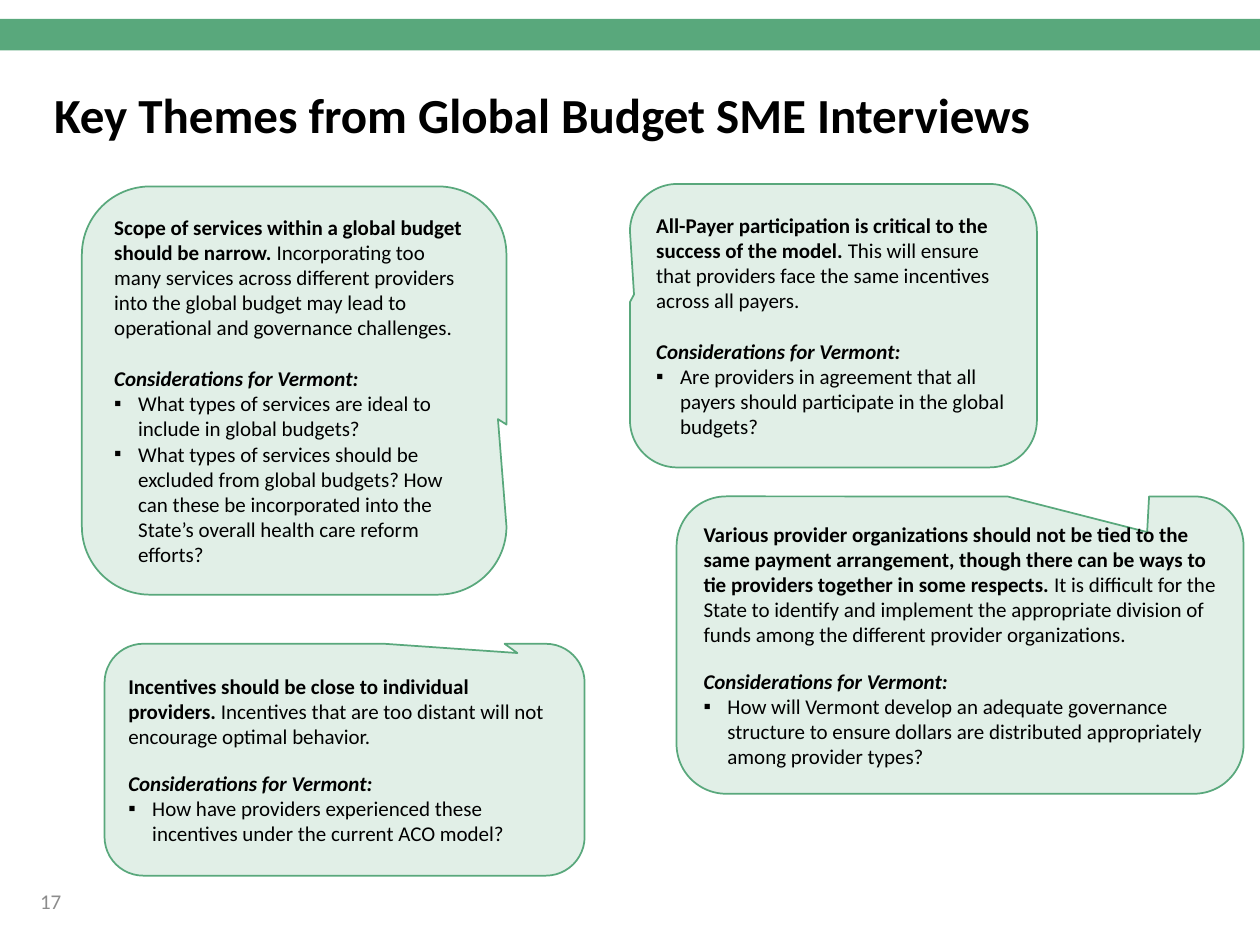
from lxml import etree
from pptx import Presentation
from pptx import util as u
from pptx.dml.color import RGBColor
from pptx.enum import shapes, text
from pptx.oxml import ns

HUES = {"bar": "59A87C", "fill": "E1EFE7", "ink": "000000", "page": "8C8C8C"}
FONT = "Calibri"
COLS, ROWS = 100, 75
HEAD = "Considerations for Vermont:"

# Box on the grid, callout tip, gap after the lead (pt), theme, detail, questions
THEMES = [
    ((50, 14.6, 32.3, 22.5), (-0.49, -0.11), 14.5,
     "All-Payer participation is critical to the success of the model. ",
     "This will ensure that providers face the same incentives across all payers.",
     ["Are providers in agreement that all payers should participate in the "
      "global budgets?"]),
    ((8.3, 51.1, 38.1, 18.4), (0.36, -0.46), 12,
     "Incentives should be close to individual providers. ",
     "Incentives that are too distant will not encourage optimal behavior.",
     ["How have providers experienced these incentives under the current ACO "
      "model?"]),
    ((6.5, 14.8, 33.7, 32.4), (0.48, 0.07), 14.5,
     "Scope of services within a global budget should be narrow. ",
     "Incorporating too many services across different providers into the "
     "global budget may lead to operational and governance challenges.",
     ["What types of services are ideal to include in global budgets?",
      "What types of services should be excluded from global budgets? How can "
      "these be incorporated into the State’s overall health care reform "
      "efforts?"]),
    ((53.7, 39.4, 45, 23.6), (0.33, -0.38), 12,
     "Various provider organizations should not be tied to the same payment "
     "arrangement, though there can be ways to tie providers together in some "
     "respects. ",
     "It is difficult for the State to identify and implement the appropriate "
     "division of funds among the different provider organizations.",
     ["How will Vermont develop an adequate governance structure to ensure "
      "dollars are distributed appropriately among provider types?"]),
]


class Deck:
    """Holds the style and the current slide."""

    def __init__(self):
        self.prs = Presentation()
        self.prs.slide_width, self.prs.slide_height = u.Inches(10), u.Inches(7.5)
        self.slide = self.prs.slides.add_slide(self.prs.slide_layouts[5])

    def grid(self, x, y, w, h):
        col, row = self.prs.slide_width / COLS, self.prs.slide_height / ROWS
        return [u.Emu(round(n)) for n in (x * col, y * row, w * col, h * row)]

    def hue(self, name):
        return RGBColor.from_string(HUES[name])

    def run(self, par, words, size=12, hue="ink", bold=False, slant=False):
        run = par.add_run()
        run.text = words
        font = run.font
        font.name, font.size = FONT, u.Pt(size)
        font.bold, font.italic = bold, slant
        font.color.rgb = self.hue(hue)

    def frame(self, shape):
        frame = shape.text_frame
        frame.word_wrap = True
        frame.auto_size = text.MSO_AUTO_SIZE.NONE
        frame.vertical_anchor = text.MSO_ANCHOR.MIDDLE
        frame.paragraphs[0].alignment = text.PP_ALIGN.LEFT
        return frame

    def shape(self, kind, box, fill, line=None):
        shape = self.slide.shapes.add_shape(kind, *self.grid(*box))
        shape.shadow.inherit = False
        shape.fill.solid()
        shape.fill.fore_color.rgb = self.hue(fill)
        if line:
            shape.line.color.rgb = self.hue(line)
            shape.line.width = u.Pt(1)
        else:
            shape.line.fill.background()
        return shape

    def title(self, box, words):
        shape = self.slide.shapes.title
        shape.left, shape.top, shape.width, shape.height = self.grid(*box)
        par = self.frame(shape).paragraphs[0]
        par.line_spacing = 0.9
        self.run(par, words, 28, bold=True)

    def label(self, box, words):
        shape = self.slide.shapes.add_textbox(*self.grid(*box))
        self.run(self.frame(shape).paragraphs[0], words, hue="page")

    def bullet(self, par):
        props = par._p.get_or_add_pPr()
        props.set("marL", str(u.Inches(0.19)))
        props.set("indent", str(-u.Inches(0.19)))
        tint = etree.SubElement(props, ns.qn("a:buClr"))
        etree.SubElement(tint, ns.qn("a:srgbClr"), val=HUES["ink"])
        etree.SubElement(props, ns.qn("a:buFont"), typeface="Arial")
        etree.SubElement(props, ns.qn("a:buChar"), char="▪")

    def callout(self, box, tip, gap, theme, detail, asks):
        kind = shapes.MSO_SHAPE.ROUNDED_RECTANGULAR_CALLOUT
        shape = self.shape(kind, box, "fill", "bar")
        for i, value in enumerate((*tip, 0.167)):
            shape.adjustments[i] = value
        frame = self.frame(shape)
        # Theme and its detail
        lead = frame.paragraphs[0]
        lead.space_after = u.Pt(gap)
        self.run(lead, theme, bold=True)
        self.run(lead, detail)
        # Questions for the state
        for i, words in enumerate([HEAD, *asks]):
            par = frame.add_paragraph()
            par.alignment = text.PP_ALIGN.LEFT
            if i:
                self.bullet(par)
            self.run(par, words, bold=not i, slant=not i)


def main():
    deck = Deck()
    # Header band, title and page number
    deck.shape(shapes.MSO_SHAPE.RECTANGLE, (0, 1.5, COLS, 2.5), "bar")
    deck.title((3.3, 2.1, 96.7, 14.5), "Key Themes from Global Budget SME Interviews")
    deck.label((2.2, 69.5, 22.5, 4), "17")
    # Interview themes
    for theme in THEMES:
        deck.callout(*theme)
    deck.prs.save("out.pptx")


if __name__ == "__main__":
    main()
